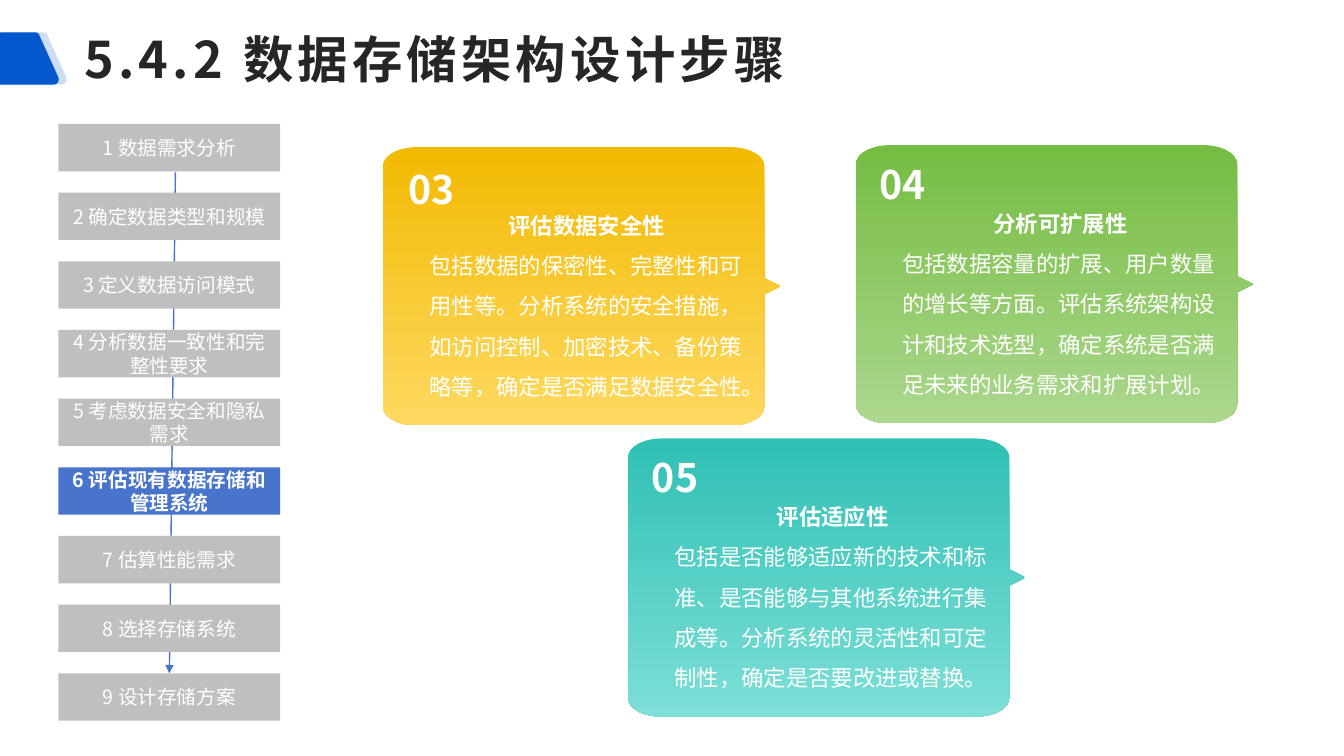
from lxml import etree
from pptx import Presentation
from pptx.dml.color import RGBColor
from pptx.enum.shapes import MSO_CONNECTOR, MSO_SHAPE
from pptx.enum.text import MSO_ANCHOR, PP_ALIGN
from pptx.oxml.ns import qn
from pptx.util import Inches, Pt

CENTER = PP_ALIGN.CENTER
LEFT = PP_ALIGN.LEFT
MIDDLE = MSO_ANCHOR.MIDDLE
TOP = MSO_ANCHOR.TOP
RECTANGLE = MSO_SHAPE.RECTANGLE
STRAIGHT = MSO_CONNECTOR.STRAIGHT

WHITE = RGBColor(0xFF, 0xFF, 0xFF)
INK = RGBColor(0x26, 0x26, 0x26)
TAB_BLUE = RGBColor(0x05, 0x57, 0xCD)
STEP_BLUE = RGBColor(0x48, 0x74, 0xCB)
STEP_GRAY = RGBColor(0xBF, 0xBF, 0xBF)
GREEN = RGBColor(0x75, 0xBD, 0x42)
LIGHT_GREEN = RGBColor(0xAC, 0xD7, 0x8E)
YELLOW = RGBColor(0xF2, 0xBA, 0x02)
LIGHT_YELLOW = RGBColor(0xFE, 0xD9, 0x61)
TEAL = RGBColor(0x30, 0xC0, 0xB4)
LIGHT_TEAL = RGBColor(0x7D, 0xDF, 0xD7)

SANS = "Noto Sans CJK SC"
ARIAL = "Arial"
SERIF = "Times New Roman"

TAB_OUTLINE = [
    (0, 0.45), (0.19, 0.03), (0.2, 0.01, 0.21, 0, 0.23, 0),
    (0.6, 0), (0.62, 0, 0.64, 0.01, 0.64, 0.03),
    (0.83, 0.45), (0.84, 0.48, 0.82, 0.52, 0.78, 0.52),
    (0.05, 0.52), (0.01, 0.52, -0.01, 0.48, 0, 0.45),
]
CARD_OUTLINE = [
    (0.34, 0), (3.44, 0), (3.63, 0, 3.78, 0.08, 3.78, 0.19),
    (3.78, 1.3), (3.94, 1.38), (3.78, 1.46),
    (3.78, 2.57), (3.78, 2.68, 3.63, 2.76, 3.44, 2.76),
    (0.34, 2.76), (0.15, 2.76, 0, 2.68, 0, 2.57),
    (0, 0.19), (0, 0.08, 0.15, 0, 0.34, 0),
]
CARDS = [
    ("04", 8.49, 1.44, 1.44, 0.91, 0.34, GREEN, LIGHT_GREEN, "分析可扩展性",
     "包括数据容量的扩展、用户数量的增长等方面。评估系统架构设计和技术选型，确定系统是否满足未来的业务需求和扩展计划。"),
    ("03", 3.8, 1.46, 1.49, 0.94, 0.36, YELLOW, LIGHT_YELLOW, "评估数据安全性",
     "包括数据的保密性、完整性和可用性等。分析系统的安全措施，如访问控制、加密技术、备份策略等，确定是否满足数据安全性。"),
    ("05", 6.23, 4.35, 4.35, 0.91, 0.34, TEAL, LIGHT_TEAL, "评估适应性",
     "包括是否能够适应新的技术和标准、是否能够与其他系统进行集成等。分析系统的灵活性和可定制性，确定是否要改进或替换。"),
]
STEPS = [
    "数据需求分析", "确定数据类型和规模", "定义数据访问模式",
    "分析数据一致性和完整性要求", "考虑数据安全和隐私需求",
    "评估现有数据存储和管理系统", "估算性能需求", "选择存储系统", "设计存储方案",
]
CURRENT_STEP = 6
FIRST_STEP_TOP = 1.23
LAST_STEP_TOP = 6.68


def add_outline(page, left, top, outline):
    places = [
        (Inches(left + x), Inches(top + y))
        for piece in outline
        for x, y in zip(piece[::2], piece[1::2])
    ]
    builder = page.shapes.build_freeform(*places[0])
    builder.add_line_segments(places[1:], close=True)
    shape = builder.convert_to_shape()
    segments = list(shape._element.iter(qn("a:lnTo")))
    for piece in outline[1:]:
        segment = segments.pop(0)
        if len(piece) == 6:
            segment.tag = qn("a:cubicBezTo")
            for control in (segments.pop(0), segments.pop(0)):
                segment.append(control[0])
                control.getparent().remove(control)
    shape.shadow.inherit = False
    shape.line.fill.background()
    return shape


def style_run(span, font_name, size, color=WHITE, bold=False):
    span.font.name = font_name
    span.font.size = Pt(size)
    span.font.bold = bold
    span.font.color.rgb = color
    etree.SubElement(span.font._element, qn("a:ea"), typeface=SANS)


deck = Presentation()
deck.slide_width = Inches(13.33)
deck.slide_height = Inches(7.5)
page = deck.slides.add_slide(deck.slide_layouts[6])

for tab_left, alpha in [(-0.17, 20), (-0.25, 100)]:
    tab = add_outline(page, tab_left, 0.32, TAB_OUTLINE)
    tab.fill.solid()
    tab.fill.fore_color.rgb = TAB_BLUE
    if alpha < 100:
        tint = tab._element.spPr.find(qn("a:solidFill")).find(qn("a:srgbClr"))
        etree.SubElement(tint, qn("a:alpha"), val=str(alpha * 1000))

title = page.shapes.add_textbox(Inches(0.74), Inches(0.08), Inches(12.59), Inches(1))
title.text_frame.word_wrap = True
title.text_frame.vertical_anchor = MIDDLE
title.text_frame.text = "5.4.2 数据存储架构设计步骤"
title_span = title.text_frame.paragraphs[0].runs[0]
style_run(title_span, SANS, 36, INK, True)
title_span.font._element.set("spc", "300")

for (number, left, top, number_top, number_width, right_inset,
     color, light, heading, detail) in CARDS:
    card = add_outline(page, left, top, CARD_OUTLINE)
    card.fill.gradient()
    card.fill.gradient_angle = 270
    for stop, stop_color, position in zip(card.fill.gradient_stops, (color, light), (0, 1)):
        stop.color.rgb = stop_color
        stop.position = position
    frame = card.text_frame
    frame.word_wrap = True
    frame.vertical_anchor = TOP
    frame.margin_left = Inches(0.46)
    frame.margin_top = Inches(0.51)
    frame.margin_right = Inches(right_inset)
    frame.margin_bottom = Inches(0.9)
    frame.text = heading
    frame.add_paragraph().text = detail
    for para, align, font_name, bold in zip(
        frame.paragraphs, (CENTER, LEFT), (ARIAL, SANS), (True, False)
    ):
        para.alignment = align
        para.line_spacing = 1.5
        style_run(para.runs[0], font_name, 16, bold=bold)

    label = page.shapes.add_textbox(
        Inches(left + 0.01), Inches(number_top), Inches(number_width), Inches(0.76)
    )
    frame = label.text_frame
    frame.word_wrap = False
    frame.vertical_anchor = MIDDLE
    frame.margin_left = frame.margin_right = 0
    frame.margin_top = frame.margin_bottom = 0
    frame.text = number
    frame.paragraphs[0].alignment = CENTER
    style_run(frame.paragraphs[0].runs[0], SANS, 28, bold=True)

arrow = page.shapes.add_connector(
    STRAIGHT, Inches(1.74), Inches(1.71), Inches(1.68), Inches(LAST_STEP_TOP)
)
arrow.line.color.rgb = STEP_BLUE
arrow.line.width = Pt(1)
etree.SubElement(arrow.line._get_or_add_ln(), qn("a:tailEnd"), type="triangle")
etree.SubElement(arrow._element.spPr, qn("a:effectLst"))

step_pitch = (LAST_STEP_TOP - FIRST_STEP_TOP) / (len(STEPS) - 1)
for number, name in enumerate(STEPS, 1):
    current = number == CURRENT_STEP
    step_top = FIRST_STEP_TOP + (number - 1) * step_pitch
    box = page.shapes.add_shape(
        RECTANGLE, Inches(0.58), Inches(step_top), Inches(2.2), Inches(0.47)
    )
    box.shadow.inherit = False
    box.line.fill.background()
    box.fill.solid()
    box.fill.fore_color.rgb = STEP_BLUE if current else STEP_GRAY
    box.text_frame.word_wrap = True
    box.text_frame.vertical_anchor = MIDDLE
    para = box.text_frame.paragraphs[0]
    para.alignment = CENTER
    for words, font_name in [(f"{number} ", SANS), (name, SERIF)]:
        span = para.add_run()
        span.text = words
        style_run(span, font_name, 14, bold=current)

deck.save("out.pptx")
